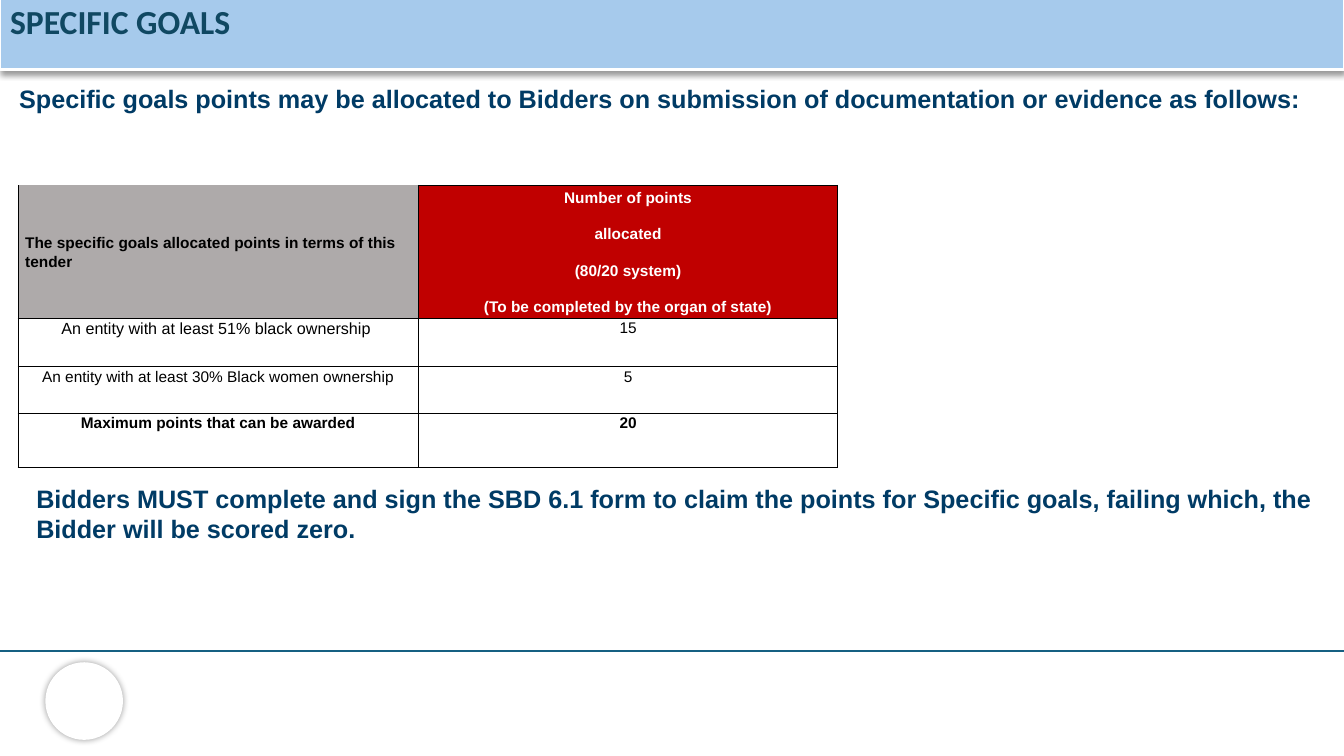
from dataclasses import dataclass

from lxml import etree
from pptx import Presentation
from pptx.dml.color import RGBColor
from pptx.enum.shapes import MSO_CONNECTOR, MSO_SHAPE
from pptx.enum.text import MSO_ANCHOR, MSO_AUTO_SIZE, PP_ALIGN
from pptx.oxml.ns import qn
from pptx.util import Pt

LEFT, CENTER = PP_ALIGN.LEFT, PP_ALIGN.CENTER
TOP, MIDDLE = MSO_ANCHOR.TOP, MSO_ANCHOR.MIDDLE
OVAL, STRAIGHT = MSO_SHAPE.OVAL, MSO_CONNECTOR.STRAIGHT
FIXED_SIZE = MSO_AUTO_SIZE.NONE
EMU_PER_PX = 9144
PAGE_WIDTH, PAGE_HEIGHT = 1333, 750


@dataclass(frozen=True)
class Theme:
    band: str = "A6CAEC"
    title: str = "104862"
    body: str = "003B65"
    rule: str = "156082"
    goal_head: str = "AEAAAA"
    points_head: str = "C00000"
    white: str = "FFFFFF"
    black: str = "000000"
    title_font: str = "Calibri"
    body_font: str = "Arial"
    title_size: float = 24
    body_size: float = 18
    cell_size: float = 11
    first_goal_size: float = 11.5


THEME = Theme()
BAND_BORDERS = {"L": 1, "R": 1, "T": 1, "B": 3}
GRID_BORDERS = {"L": 1, "R": 1, "T": 1, "B": 1}
OPEN_TOP_BORDERS = {"L": 1, "R": 1, "B": 1}
HEADINGS = [
    ["The specific goals allocated points in terms of this tender"],
    ["Number of points", "allocated", "(80/20 system)",
     "(To be completed by the organ of state)"],
]
GOALS = [
    ("An entity with at least 51% black ownership ", "15"),
    ("An entity with at least 30% Black women ownership", "5"),
    ("Maximum points that can be awarded", "20"),
]
INTRO = ("Specific goals points may be allocated to Bidders on submission of "
         "documentation or evidence as follows:")
WARNING = ("Bidders MUST complete and sign the SBD 6.1 form to claim the points for "
           "Specific goals, failing which, the Bidder will be scored zero.")


def px(length):
    return int(length * EMU_PER_PX)


def rgb(color):
    return RGBColor.from_string(color)


def paint(target, color):
    target.fill.solid()
    target.fill.fore_color.rgb = rgb(color)


def add_span(para, text, font, size, color, bold=True):
    span = para.add_run()
    span.text = text
    span.font.name = font
    span.font.size = Pt(size)
    span.font.bold = bold
    span.font.color.rgb = rgb(color)


def add_shadow(effects, blur, distance):
    shadow = etree.SubElement(
        effects, qn("a:outerShdw"), blurRad=str(Pt(blur)), dist=str(Pt(distance)),
        dir="5400000", algn="ctr", rotWithShape="0")
    color = etree.SubElement(shadow, qn("a:srgbClr"), val=THEME.black)
    etree.SubElement(color, qn("a:alpha"), val="40000")


def add_borders(cell, color, widths):
    properties = cell._tc.get_or_add_tcPr()
    for index, side in enumerate("LRTB"):
        border = etree.Element(qn(f"a:ln{side}"), w=str(Pt(widths.get(side, 1))))
        if side in widths:
            fill = etree.SubElement(border, qn("a:solidFill"))
            etree.SubElement(fill, qn("a:srgbClr"), val=color)
        else:
            etree.SubElement(border, qn("a:noFill"))
        properties.insert(index, border)


def add_grid(page, box, widths, heights):
    table = page.shapes.add_table(len(heights), len(widths), *map(px, box)).table
    table.horz_banding = False
    for column, width in zip(table.columns, widths):
        column.width = px(width)
    for row, height in zip(table.rows, heights):
        row.height = px(height)
    return table


def add_title_band(page, box):
    table = add_grid(page, box, [box[2]], [box[3]])
    effects = etree.Element(qn("a:effectLst"))
    table._tbl.tblPr.insert(0, effects)
    add_shadow(effects, 4, 2)
    cell = table.cell(0, 0)
    paint(cell, THEME.band)
    add_span(cell.text_frame.paragraphs[0], "SPECIFIC GOALS",
             THEME.title_font, THEME.title_size, THEME.title)
    add_borders(cell, THEME.white, BAND_BORDERS)


def fill_statement(holder, box, text):
    holder.left, holder.top, holder.width, holder.height = map(px, box)
    frame = holder.text_frame
    frame.auto_size = FIXED_SIZE
    frame.vertical_anchor = TOP
    frame.word_wrap = True
    para = frame.paragraphs[0]
    properties = para._p.get_or_add_pPr()
    properties.set("marL", "0")
    properties.set("indent", "0")
    etree.SubElement(properties, qn("a:buNone"))
    para.alignment = LEFT
    para.space_before = Pt(0)
    add_span(para, text, THEME.body_font, THEME.body_size, THEME.body)


def fill_cell(cell, lines, fill, color, size, bold, align, anchor, borders=GRID_BORDERS):
    paint(cell, fill)
    cell.margin_left = cell.margin_right = px(7)
    cell.margin_top = cell.margin_bottom = 0
    cell.vertical_anchor = anchor
    for index, line in enumerate(lines):
        para = cell.text_frame.add_paragraph() if index else cell.text_frame.paragraphs[0]
        para.alignment = align
        para.line_spacing = 1.07
        if index:
            para.space_before = Pt(4.8)
        if index < len(lines) - 1:
            para.space_after = Pt(8)
        add_span(para, line, THEME.body_font, size, color, bold)
    add_borders(cell, THEME.black, borders)


def add_points_table(page, box, widths, heights):
    table = add_grid(page, box, widths, heights)
    fill_cell(table.cell(0, 0), HEADINGS[0], THEME.goal_head, THEME.black,
              THEME.cell_size, True, LEFT, MIDDLE, OPEN_TOP_BORDERS)
    fill_cell(table.cell(0, 1), HEADINGS[1], THEME.points_head, THEME.white,
              THEME.cell_size, True, CENTER, MIDDLE)
    for row, goal in enumerate(GOALS, 1):
        for column, text in enumerate(goal):
            size = THEME.first_goal_size if (row, column) == (1, 0) else THEME.cell_size
            fill_cell(table.cell(row, column), [text], THEME.white, THEME.black,
                      size, row == len(GOALS), CENTER, TOP)


def add_footer(page, box):
    left, top, width, height = box
    rule = page.shapes.add_connector(
        STRAIGHT, px(left + width), px(top), px(left), px(top))
    rule.line.color.rgb = rgb(THEME.rule)
    rule.line.width = Pt(1.5)
    etree.SubElement(rule._element.spPr, qn("a:effectLst"))
    disc = page.shapes.add_shape(OVAL, px(left + 45), px(top + 11), px(77), px(77))
    paint(disc, THEME.white)
    disc.line.fill.background()
    disc.shadow.inherit = False
    add_shadow(disc._element.spPr.find(qn("a:effectLst")), 5, 0)


def build_goals_page(deck):
    page = deck.slides.add_slide(deck.slide_layouts[1])
    intro, warning = page.placeholders
    add_footer(page, (0, 646, PAGE_WIDTH, 104))
    add_title_band(page, (0, -2, PAGE_WIDTH, 71))
    fill_statement(intro, (9, 78, 1306, 40), INTRO)
    fill_statement(warning, (26, 474, 1288, 71), WARNING)
    add_points_table(page, (18, 184, 813, 280), (397, 416), (132, 48, 46, 54))


def main():
    deck = Presentation()
    deck.slide_width, deck.slide_height = px(PAGE_WIDTH), px(PAGE_HEIGHT)
    build_goals_page(deck)
    deck.save("out.pptx")


if __name__ == "__main__":
    main()
